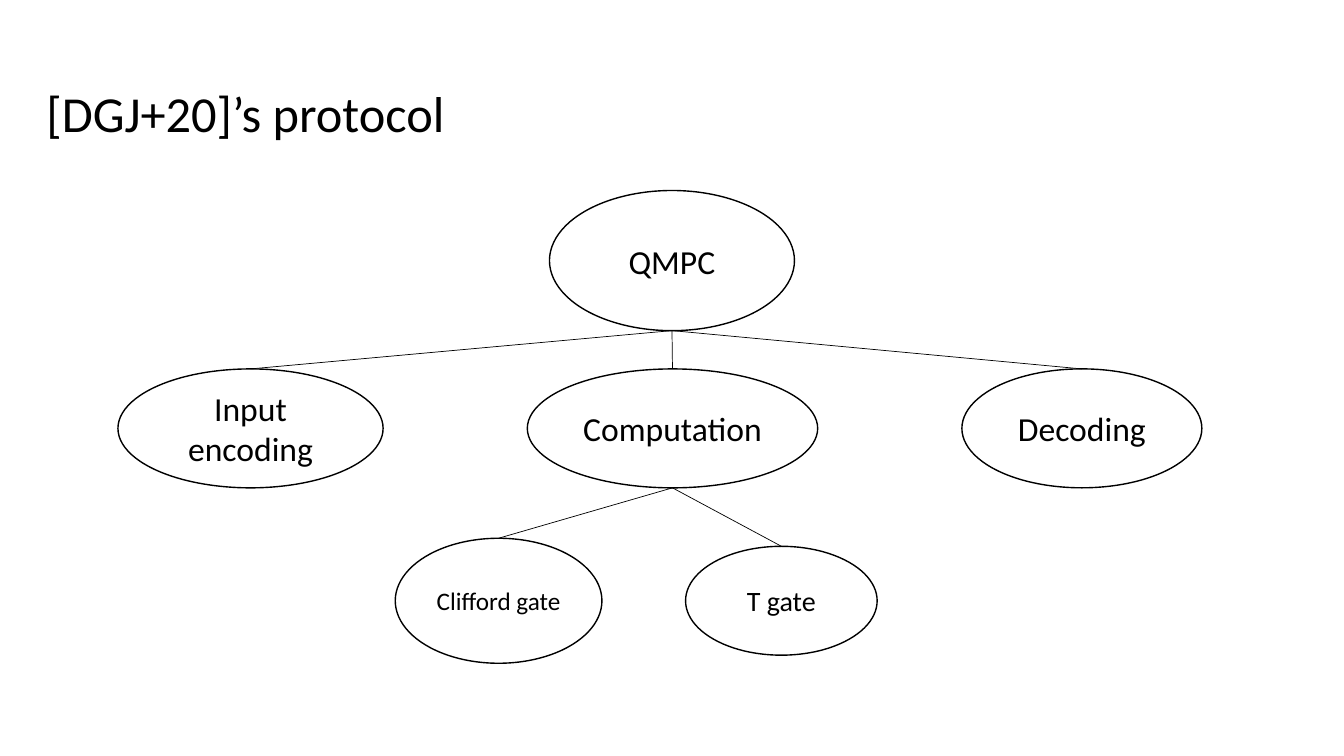
import pptx
import pptx.dml.color
import pptx.enum.shapes
import pptx.enum.text
import pptx.oxml
import pptx.util
from pptx.util import Inches

BLACK = pptx.dml.color.RGBColor(0, 0, 0)
WHITE = pptx.dml.color.RGBColor(255, 255, 255)
FONT = "Calibri"

# name: (left, top, width, height, text size, parent)
NODES = {
    "QMPC": (5.45, 1.89, 2.43, 1.39, 24, None),
    "Input encoding": (1.17, 3.66, 2.63, 1.18, 24, "QMPC"),
    "Computation": (5.23, 3.66, 2.88, 1.18, 24, "QMPC"),
    "Decoding": (9.54, 3.66, 2.38, 1.18, 24, "QMPC"),
    "Clifford gate": (3.92, 5.34, 2.05, 1.24, 18, "Computation"),
    "T gate": (6.8, 5.42, 1.9, 1.08, 20, "Computation"),
}


def write_text(shape, text, size, align, anchor):
    frame = shape.text_frame
    frame.word_wrap = True
    frame.auto_size = pptx.enum.text.MSO_AUTO_SIZE.NONE
    frame.vertical_anchor = anchor
    paragraph = frame.paragraphs[0]
    paragraph.alignment = align
    run = paragraph.add_run()
    run.text = text
    run.font.name = FONT
    run.font.size = pptx.util.Pt(size)
    run.font.color.rgb = BLACK


class TreeSlide:
    def __init__(self, presentation):
        self.slide = presentation.slides.add_slide(presentation.slide_layouts[5])
        self.node_line = pptx.util.Pt(1)
        self.branch_line = pptx.util.Pt(0.5)

    def title(self, text, left, top, width, height):
        shape = self.slide.shapes.title
        shape.left, shape.top = Inches(left), Inches(top)
        shape.width, shape.height = Inches(width), Inches(height)
        write_text(shape, text, size=36, align=pptx.enum.text.PP_ALIGN.LEFT,
                   anchor=pptx.enum.text.MSO_ANCHOR.TOP)

    def node(self, text, left, top, width, height, size):
        shape = self.slide.shapes.add_shape(
            pptx.enum.shapes.MSO_SHAPE.OVAL,
            Inches(left), Inches(top), Inches(width), Inches(height))
        shape.shadow.inherit = False
        shape.fill.solid()
        shape.fill.fore_color.rgb = WHITE
        shape.line.color.rgb = BLACK
        shape.line.width = self.node_line
        write_text(shape, text, size=size, align=pptx.enum.text.PP_ALIGN.CENTER,
                   anchor=pptx.enum.text.MSO_ANCHOR.MIDDLE)
        return shape

    def branch(self, parent, child):
        """Draw a line from the bottom of the parent to the top of the child."""
        start_x = parent.left + parent.width // 2
        start_y = parent.top + parent.height
        connector = self.slide.shapes.add_connector(
            pptx.enum.shapes.MSO_CONNECTOR.STRAIGHT,
            start_x, start_y, start_x, start_y)
        connector.end_connect(child, 0)
        connector.line.color.rgb = BLACK
        connector.line.width = self.branch_line
        connector._element.spPr.append(pptx.oxml.parse_xml(
            '<a:effectLst xmlns:a="http://schemas.openxmlformats.org/drawingml/2006/main"/>'))


def main():
    presentation = pptx.Presentation()
    presentation.slide_width = Inches(13.33)
    presentation.slide_height = Inches(7.5)
    tree = TreeSlide(presentation)
    tree.title("[DGJ+20]’s protocol", 0.36, 0.76, 4.63, 1.01)
    shapes = {}
    for name, (left, top, width, height, size, parent) in NODES.items():
        shapes[name] = tree.node(name, left, top, width, height, size)
        if parent:
            tree.branch(shapes[parent], shapes[name])
    presentation.save("out.pptx")


if __name__ == "__main__":
    main()
